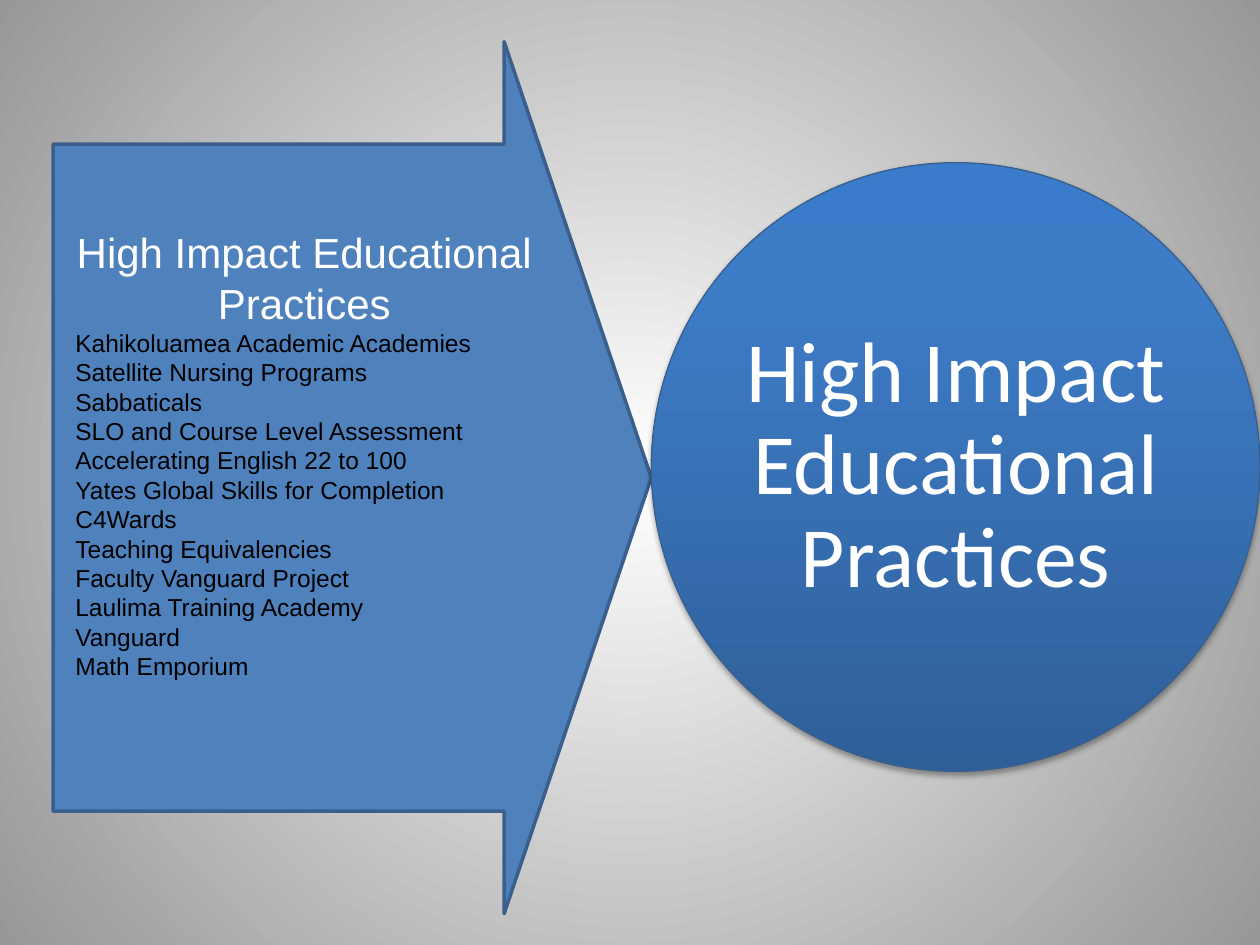
from lxml import etree
from pptx import Presentation
from pptx.dml.color import RGBColor
from pptx.enum.shapes import MSO_SHAPE
from pptx.enum.text import MSO_ANCHOR, PP_ALIGN
from pptx.oxml import parse_xml
from pptx.oxml.ns import qn
from pptx.util import Cm, Pt

ARROW, CIRCLE = MSO_SHAPE.RIGHT_ARROW, MSO_SHAPE.OVAL
TOP, MIDDLE = MSO_ANCHOR.TOP, MSO_ANCHOR.MIDDLE
LEFT, CENTER = PP_ALIGN.LEFT, PP_ALIGN.CENTER
NAMESPACE = "http://schemas.openxmlformats.org/drawingml/2006/main"

# Content
TITLE = "High Impact Educational Practices"
PROGRAMS = [
    "Kahikoluamea Academic Academies",
    "Satellite Nursing Programs",
    "Sabbaticals",
    "SLO and Course Level Assessment",
    "Accelerating English 22 to 100",
    "Yates Global Skills for Completion",
    "C4Wards",
    "Teaching Equivalencies",
    "Faculty Vanguard Project",
    "Laulima Training Academy",
    "Vanguard",
    "Math Emporium",
]

# Formats
HEADING = {"name": "Arial", "size": Pt(24), "color": "FFFFFF", "align": CENTER}
ITEM = {"name": "Arial", "size": Pt(14), "color": "000000", "align": LEFT}
GOAL = {"name": "Calibri", "size": Pt(49), "color": "FFFFFF", "align": CENTER}
OUTLINE = "3A5F8C"
BACKDROP = [(0, "FFFFFF"), (100, "979797")]
CIRCLE_BLUES = [(0, "2F5F99"), (80, "3D7CC7"), (100, "3A7CCB")]
RADIAL = ('<a:path path="circle"><a:fillToRect l="50000" t="50000" '
          'r="50000" b="50000"/></a:path>')
UPWARD = '<a:lin ang="16200000" scaled="0"/>'

# Places in cm: left, top, width, height
ARROW_AT = (1.07, 0.84, 12.06, 17.58)
LIST_AT = (1.27, 4.45, 9.73, 12.32)
DIAMETER = 12.27
CIRCLE_AT = (ARROW_AT[0] + ARROW_AT[2], 3.28, DIAMETER, DIAMETER)


def color(value):
    return RGBColor.from_string(value)


def set_gradient(fill, owner, stops, direction):
    """Give a fill its colour stops and the element that sets its direction."""
    fill.gradient()
    old = owner.find(".//" + qn("a:gradFill"))
    marks = "".join(
        f'<a:gs pos="{place * 1000}"><a:srgbClr val="{value}"/></a:gs>'
        for place, value in stops)
    new = parse_xml(f'<a:gradFill xmlns:a="{NAMESPACE}" rotWithShape="1">'
                    f'<a:gsLst>{marks}</a:gsLst>{direction}</a:gradFill>')
    old.getparent().replace(old, new)


def add_shape(page, kind, place, width):
    shape = page.shapes.add_shape(kind, *map(Cm, place))
    shape.shadow.inherit = False
    shape.line.color.rgb = color(OUTLINE)
    shape.line.width = Pt(width)
    return shape


def add_text(page, place, lines, anchor, inset=None):
    frame = page.shapes.add_textbox(*map(Cm, place)).text_frame
    frame.word_wrap = True
    frame.vertical_anchor = anchor
    if inset is not None:
        for side in ("left", "top", "right", "bottom"):
            setattr(frame, f"margin_{side}", Cm(inset))
    for index, (text, style) in enumerate(lines):
        para = frame.add_paragraph() if index else frame.paragraphs[0]
        para.alignment = style["align"]
        span = para.add_run()
        span.text = text
        for key in ("name", "size"):
            setattr(span.font, key, style[key])
        span.font.color.rgb = color(style["color"])
    return frame


def main():
    deck = Presentation()
    deck.slide_width, deck.slide_height = Cm(25.4), Cm(19.05)
    page = deck.slides.add_slide(deck.slide_layouts[6])
    set_gradient(page.background.fill, page.element, BACKDROP, RADIAL)

    # Arrow
    arrow = add_shape(page, ARROW, ARROW_AT, 2)
    arrow.adjustments[0], arrow.adjustments[1] = 0.765, 0.246
    arrow.fill.solid()
    arrow.fill.fore_color.rgb = color("4F81BD")

    # Circle with a soft shadow below
    circle = add_shape(page, CIRCLE, CIRCLE_AT, 0.75)
    set_gradient(circle.fill, circle.element, CIRCLE_BLUES, UPWARD)
    effects = circle.element.spPr.find(qn("a:effectLst"))
    shadow = etree.SubElement(
        effects, qn("a:outerShdw"), blurRad=str(Pt(3.1)), dist=str(Pt(1.8)),
        dir="5400000", rotWithShape="0")
    black = etree.SubElement(shadow, qn("a:srgbClr"), val="000000")
    etree.SubElement(black, qn("a:alpha"), val="35000")

    # Texts
    goal = add_text(page, CIRCLE_AT, [(TITLE, GOAL)], MIDDLE, inset=0.18)
    goal.paragraphs[0].line_spacing = 0.9
    programs = [(name, ITEM) for name in PROGRAMS]
    add_text(page, LIST_AT, [(TITLE, HEADING)] + programs, TOP)

    deck.save("out.pptx")


if __name__ == "__main__":
    main()
